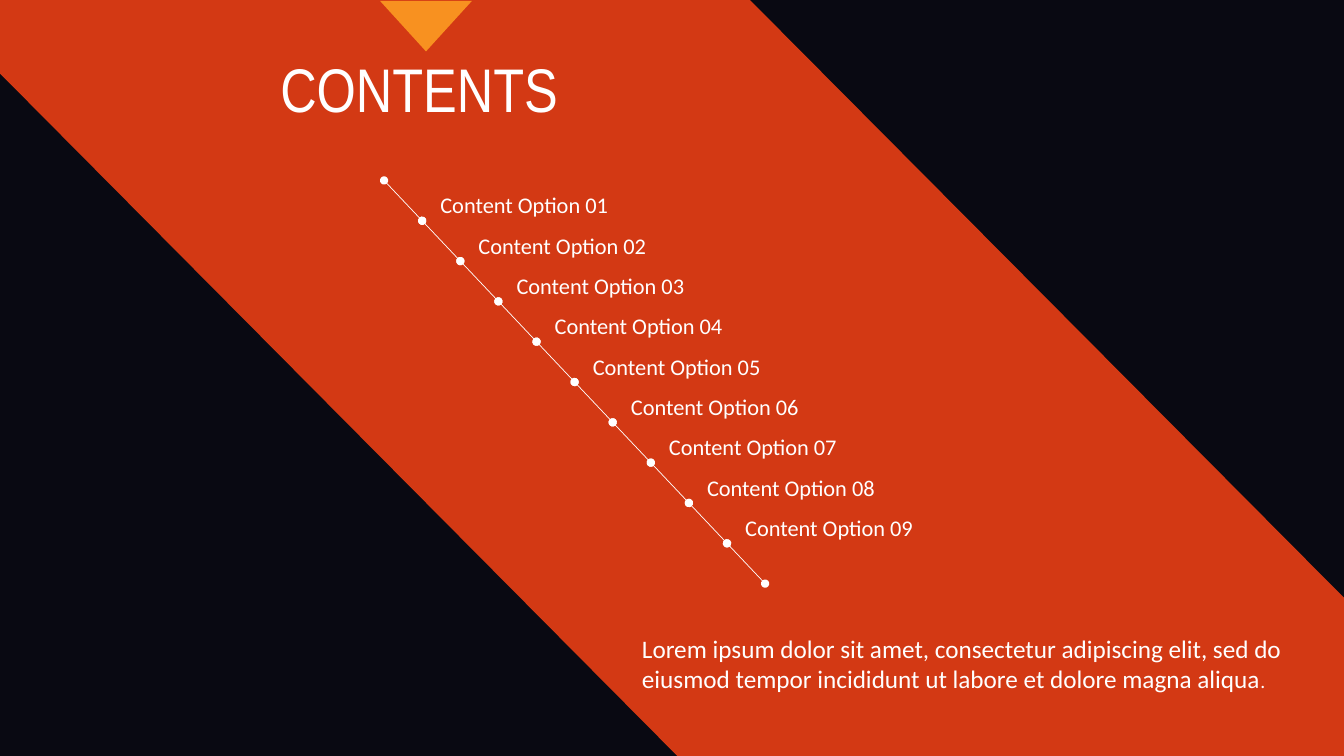
"""Build a contents slide with a diagonal band and a stepped list of options."""
from dataclasses import dataclass

from lxml import etree
from pptx import Presentation
from pptx.dml.color import RGBColor
from pptx.enum.shapes import MSO_CONNECTOR, MSO_SHAPE
from pptx.enum.text import MSO_AUTO_SIZE, PP_ALIGN
from pptx.oxml.ns import qn
from pptx.shapes.autoshape import Shape
from pptx.slide import Slide
from pptx.util import Emu, Inches, Pt

LINE = MSO_CONNECTOR.STRAIGHT
RECT = MSO_SHAPE.RECTANGLE
WEDGE = MSO_SHAPE.ISOSCELES_TRIANGLE
GROW = MSO_AUTO_SIZE.SHAPE_TO_FIT_TEXT
LEFT, CENTER = PP_ALIGN.LEFT, PP_ALIGN.CENTER

NAVY = RGBColor(0x20, 0x21, 0x3D)
BLACK = RGBColor(0x00, 0x00, 0x00)
RED = RGBColor(0xD3, 0x39, 0x14)
AMBER = RGBColor(0xF8, 0x91, 0x20)
WHITE = RGBColor(0xFF, 0xFF, 0xFF)

WIDTH, HEIGHT = Inches(13.333), Inches(7.5)
BAND = [(55.8, 0), (100, 79.07), (100, 100), (50.4, 100), (0, 9.73), (0, 0)]
START, END = (28.58, 23.87), (56.93, 77.2)
STEPS = 10
STEP_X = (END[0] - START[0]) / STEPS
STEP_Y = (END[1] - START[1]) / STEPS


@dataclass(frozen=True)
class Box:
    """A frame in percent of the slide's width and height."""
    left: float
    top: float
    width: float
    height: float

    def frame(self) -> tuple[Emu, Emu, Emu, Emu]:
        return (*point(self.left, self.top), *point(self.width, self.height))


@dataclass(frozen=True)
class Label:
    """A text box whose runs are pairs of wording and size."""
    box: Box
    runs: tuple[tuple[str, int], ...]
    font: str = "Calibri"
    align: PP_ALIGN = LEFT


def point(x: float, y: float) -> tuple[Emu, Emu]:
    """Turn percent of the slide into lengths."""
    return Emu(round(WIDTH * x / 100)), Emu(round(HEIGHT * y / 100))


def paint(shape: Shape, color: RGBColor) -> None:
    """Give a shape a plain fill without line or shadow."""
    shape.shadow.inherit = False
    shape.fill.solid()
    shape.fill.fore_color.rgb = color
    shape.line.fill.background()


def add_shade(slide: Slide) -> None:
    """Darken the whole slide with a see-through black sheet."""
    shade = slide.shapes.add_shape(RECT, *Box(0, 0, 100, 100).frame())
    paint(shade, BLACK)
    color = shade.fill._xPr.find(".//" + qn("a:srgbClr"))
    etree.SubElement(color, qn("a:alpha"), val="70000")


def add_band(slide: Slide) -> None:
    """Draw the diagonal band."""
    first, *rest = [point(x, y) for x, y in BAND]
    path = slide.shapes.build_freeform(*first)
    path.add_line_segments(rest, close=True)
    paint(path.convert_to_shape(), RED)


def add_wedge(slide: Slide) -> None:
    """Draw the marker above the title."""
    wedge = slide.shapes.add_shape(WEDGE, *Box(28.28, 0.13, 6.83, 6.67).frame())
    wedge.rotation = 180
    paint(wedge, AMBER)


def add_link(slide: Slide, step: int) -> None:
    """Draw one dotted link of the chain."""
    x, y = START[0] + step * STEP_X, START[1] + step * STEP_Y
    link = slide.shapes.add_connector(LINE, *point(x, y), *point(x + STEP_X, y + STEP_Y))
    link.line.color.rgb = WHITE
    link.line.width = Pt(0.5)
    props = link.line._get_or_add_ln()
    for end in ("a:headEnd", "a:tailEnd"):
        etree.SubElement(props, qn(end), type="oval")
    etree.SubElement(link._element.spPr, qn("a:effectLst"))


def add_label(slide: Slide, label: Label) -> None:
    """Write one text box."""
    frame = slide.shapes.add_textbox(*label.box.frame()).text_frame
    frame.word_wrap = True
    frame.auto_size = GROW
    para = frame.paragraphs[0]
    para.alignment = label.align
    para.font.name = label.font
    para.font.color.rgb = WHITE
    para.font.size = Pt(label.runs[0][1])
    for text, size in label.runs:
        run = para.add_run()
        run.text = text
        if size != label.runs[0][1]:
            run.font.size = Pt(size)


TITLE = Label(Box(16.2, 6.13, 30, 11.2), (("CONTENTS", 44),), "Arial Narrow", CENTER)
OPTIONS = [
    Label(Box(32.03 + i * STEP_X, 24.67 + i * STEP_Y, 15, 4.93),
          ((f"Content Option {i + 1:02}", 16),))
    for i in range(STEPS - 1)
]
BODY = Label(Box(47.03, 83.07, 52.95, 9.47), (
    ("Lorem ipsum dolor sit amet, consectetur adipiscing elit, sed do "
     "eiusmod tempor incididunt ut labore et dolore magna aliqua", 18),
    (".", 14),
))


def main() -> None:
    """Build and save the slide."""
    deck = Presentation()
    deck.slide_width, deck.slide_height = WIDTH, HEIGHT
    slide = deck.slides.add_slide(deck.slide_layouts[6])
    slide.background.fill.solid()
    slide.background.fill.fore_color.rgb = NAVY
    add_shade(slide)
    add_band(slide)
    add_label(slide, TITLE)
    for step in range(STEPS):
        add_link(slide, step)
    for option in OPTIONS:
        add_label(slide, option)
    add_wedge(slide)
    add_label(slide, BODY)
    deck.save("out.pptx")


if __name__ == "__main__":
    main()
